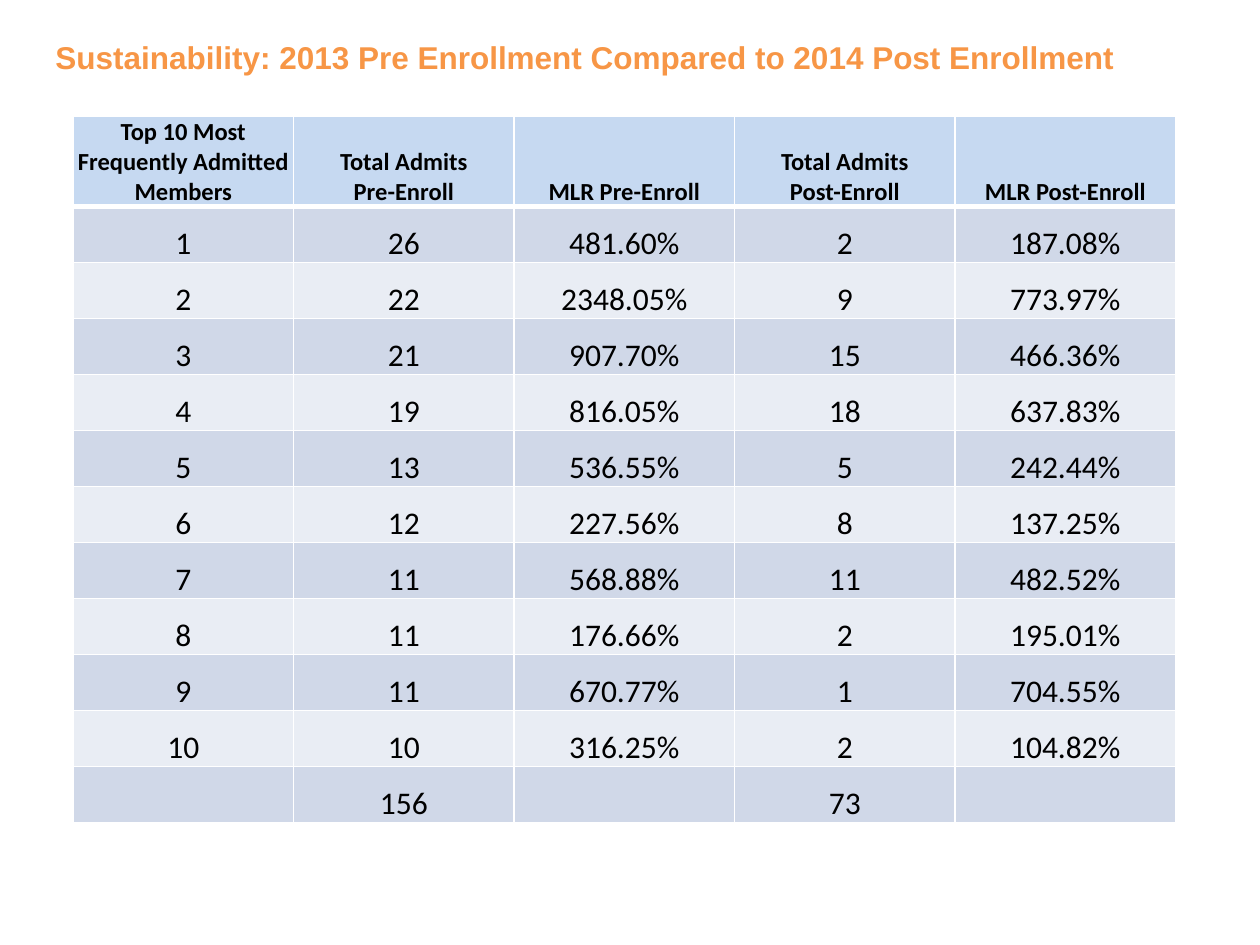
from lxml import etree
from pptx import Presentation
from pptx.dml.color import RGBColor
from pptx.enum.text import MSO_ANCHOR, MSO_AUTO_SIZE, PP_ALIGN
from pptx.oxml.ns import qn
from pptx.util import Inches, Pt

TOP, BOTTOM = MSO_ANCHOR.TOP, MSO_ANCHOR.BOTTOM
LEFT, CENTER = PP_ALIGN.LEFT, PP_ALIGN.CENTER
NO_AUTOFIT = MSO_AUTO_SIZE.NONE
TITLE_ONLY_LAYOUT = 5

ORANGE = RGBColor(0xF7, 0x96, 0x46)
BLACK = RGBColor(0x00, 0x00, 0x00)
WHITE = RGBColor(0xFF, 0xFF, 0xFF)
HEADER_BLUE = RGBColor(0xC6, 0xD9, 0xF1)
BANDS = (RGBColor(0xD0, 0xD8, 0xE8), RGBColor(0xE9, 0xED, 0xF4))

TITLE = "Sustainability: 2013 Pre Enrollment Compared to 2014 Post Enrollment"
HEADERS = (
    "Top 10 Most Frequently Admitted Members",
    "Total Admits\nPre-Enroll",
    "MLR Pre-Enroll",
    "Total Admits\nPost-Enroll",
    "MLR Post-Enroll",
)
MEMBERS = (
    ("1", "26", "481.60%", "2", "187.08%"),
    ("2", "22", "2348.05%", "9", "773.97%"),
    ("3", "21", "907.70%", "15", "466.36%"),
    ("4", "19", "816.05%", "18", "637.83%"),
    ("5", "13", "536.55%", "5", "242.44%"),
    ("6", "12", "227.56%", "8", "137.25%"),
    ("7", "11", "568.88%", "11", "482.52%"),
    ("8", "11", "176.66%", "2", "195.01%"),
    ("9", "11", "670.77%", "1", "704.55%"),
    ("10", "10", "316.25%", "2", "104.82%"),
)
TOTALS = ("", "156", "", "73", "")


def set_font(paragraph, name, size, color, bold):
    """Format the text of a paragraph."""
    font = paragraph.font
    font.name, font.size, font.bold = name, Pt(size), bold
    font.color.rgb = color


def add_title(slide, left, top, width, height):
    """Fill the title placeholder and place it in the given box."""
    title = slide.shapes.title
    title.left, title.top, title.width, title.height = left, top, width, height
    frame = title.text_frame
    frame.text = TITLE
    frame.word_wrap = True
    frame.auto_size = NO_AUTOFIT
    frame.vertical_anchor = TOP
    paragraph = frame.paragraphs[0]
    paragraph.alignment = LEFT
    set_font(paragraph, "Arial", 18, ORANGE, True)


def set_borders(cell, bottom_width):
    """Draw white borders around a cell."""
    properties = cell._tc.get_or_add_tcPr()
    widths = (("a:lnL", 1), ("a:lnR", 1), ("a:lnT", 1), ("a:lnB", bottom_width))
    for position, (tag, width) in enumerate(widths):
        line = etree.Element(qn(tag), w=str(Pt(width)))
        fill = etree.SubElement(line, qn("a:solidFill"))
        etree.SubElement(fill, qn("a:srgbClr"), val=str(WHITE))
        properties.insert(position, line)


def fill_cell(cell, text, fill_color, size, bold, bottom_width):
    """Write and format one table cell."""
    cell.fill.solid()
    cell.fill.fore_color.rgb = fill_color
    set_borders(cell, bottom_width)
    cell.vertical_anchor = BOTTOM
    cell.margin_left = cell.margin_right = cell.margin_top = Inches(0.01)
    cell.margin_bottom = 0
    cell.text = text
    for paragraph in cell.text_frame.paragraphs:
        paragraph.alignment = CENTER
        set_font(paragraph, "Calibri", size, BLACK, bold)


def add_admissions_table(slide, left, top, width, height):
    """Add the table of admissions and ratios in the given box."""
    rows = (HEADERS, *MEMBERS, TOTALS)
    table = slide.shapes.add_table(
        len(rows), len(HEADERS), left, top, width, height
    ).table
    header_height = Inches(0.72)
    body_height = (height - header_height) // (len(rows) - 1)
    for row_index, texts in enumerate(rows):
        is_header = row_index == 0
        table.rows[row_index].height = header_height if is_header else body_height
        fill_color = HEADER_BLUE if is_header else BANDS[(row_index - 1) % 2]
        size, bottom_width = (14, 3) if is_header else (18, 1)
        for column_index, text in enumerate(texts):
            cell = table.cell(row_index, column_index)
            fill_cell(cell, text, fill_color, size, is_header, bottom_width)


def main():
    """Build and save the presentation."""
    presentation = Presentation()
    presentation.slide_width = Inches(10)
    presentation.slide_height = Inches(7.5)
    layout = presentation.slide_layouts[TITLE_ONLY_LAYOUT]
    slide = presentation.slides.add_slide(layout)
    add_title(slide, Inches(0.34), Inches(0.25), Inches(8.74), Inches(0.5))
    add_admissions_table(
        slide, Inches(0.58), Inches(0.92), Inches(8.75), Inches(5.61)
    )
    presentation.save("out.pptx")


if __name__ == "__main__":
    main()
